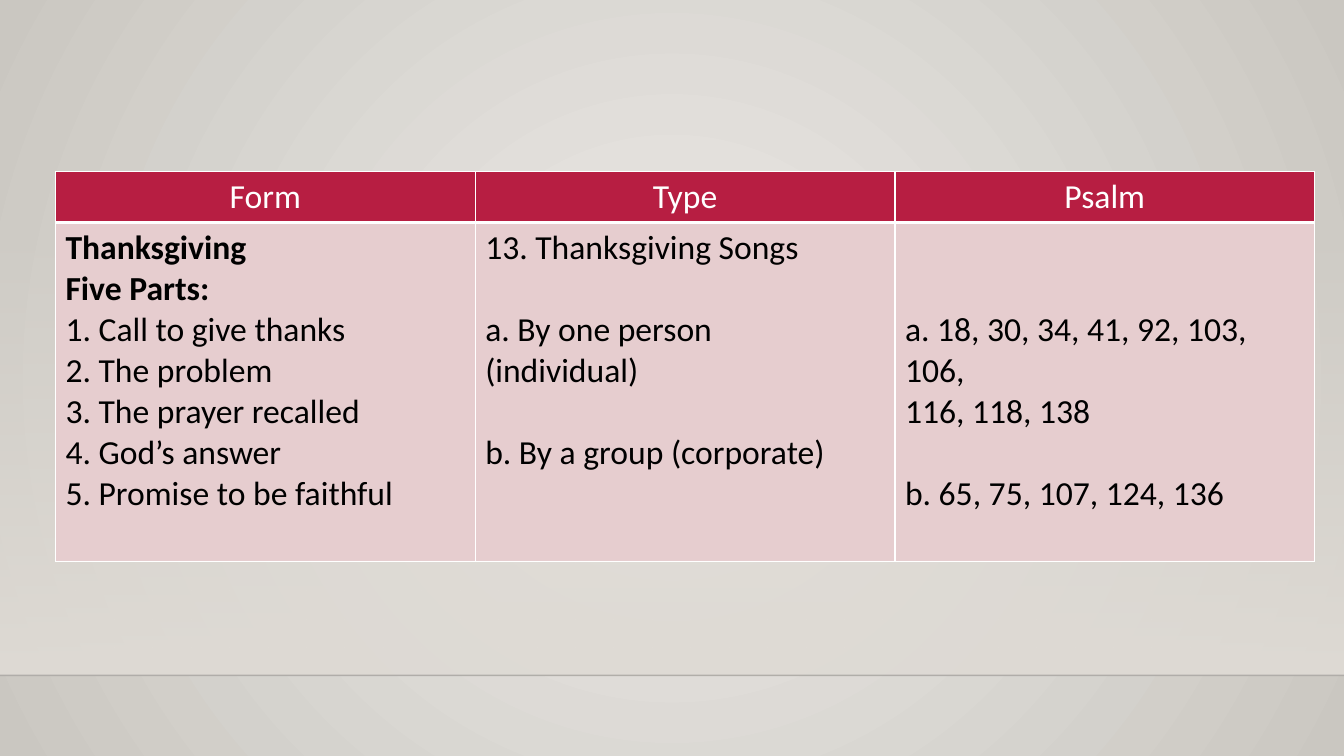
from dataclasses import dataclass

from lxml import etree
from pptx import Presentation
from pptx.dml.color import RGBColor
from pptx.enum.shapes import MSO_CONNECTOR, MSO_SHAPE
from pptx.enum.text import PP_ALIGN
from pptx.oxml import parse_xml
from pptx.oxml.ns import nsdecls, qn
from pptx.util import Inches, Pt

CENTER = PP_ALIGN.CENTER
STRAIGHT = MSO_CONNECTOR.STRAIGHT
RECTANGLE = MSO_SHAPE.RECTANGLE

# Content: each entry is (text, bold, lines left free above it)
HEADERS = ["Form", "Type", "Psalm"]
BODY = [
    [
        ("Thanksgiving", True, 0),
        ("Five Parts:", True, 0),
        ("1. Call to give thanks", False, 0),
        ("2. The problem", False, 0),
        ("3. The prayer recalled", False, 0),
        ("4. God’s answer", False, 0),
        ("5. Promise to be faithful", False, 0),
    ],
    [
        ("13. Thanksgiving Songs", False, 0),
        ("a. By one person", False, 1),
        ("(individual)", False, 0),
        ("b. By a group (corporate)", False, 1),
    ],
    [
        ("a. 18, 30, 34, 41, 92, 103, 106,", False, 2),
        ("116, 118, 138", False, 0),
        ("b. 65, 75, 107, 124, 136", False, 1),
    ],
]


@dataclass(frozen=True)
class Theme:
    font: str = "Calibri"
    size: int = 24
    line_height: float = 29.3
    header: str = "B71E42"
    body: str = "E6CDCF"
    white: str = "FFFFFF"
    black: str = "000000"
    glow_center: str = "ECEAE7"
    glow_edge: str = "CAC7C1"
    floor: str = "DFDBD5"
    horizon: str = "000001"


THEME = Theme()
WIDTH, HEIGHT = 13.33, 7.5
BAND_TOP, HORIZON = 2.21, 6.7
TABLE_LEFT, TABLE_TOP, TABLE_WIDTH = 0.55, 1.7, 12.49
ROW_HEIGHTS = [0.5, 3.36]
CELL_MARGIN = 0.05
RADIAL = '<a:path path="circle"><a:fillToRect l="50000" t="50000" r="50000" b="50000"/></a:path>'
DOWNWARD = '<a:lin ang="5400000" scaled="0"/>'


def set_gradient(element, stops, direction):
    """Replace the gradient in element; stops are (color, opacity percent)."""
    first, last = (
        f'<a:srgbClr val="{color}"><a:alpha val="{opacity * 1000}"/></a:srgbClr>'
        for color, opacity in stops
    )
    gradient = parse_xml(
        f'<a:gradFill {nsdecls("a")} rotWithShape="1"><a:gsLst>'
        f'<a:gs pos="0">{first}</a:gs><a:gs pos="100000">{last}</a:gs>'
        f'</a:gsLst>{direction}</a:gradFill>'
    )
    previous = element.find(".//" + qn("a:gradFill"))
    previous.getparent().replace(previous, gradient)


def set_borders(cell, bottom_width):
    properties = cell._tc.get_or_add_tcPr()
    widths = {"lnL": 1, "lnR": 1, "lnT": 1, "lnB": bottom_width}
    for position, (side, width) in enumerate(widths.items()):
        border = parse_xml(
            f'<a:{side} {nsdecls("a")} w="{Pt(width)}"><a:solidFill>'
            f'<a:srgbClr val="{THEME.white}"/></a:solidFill></a:{side}>'
        )
        properties.insert(position, border)


def fill_cell(cell, entries, fill, color, alignment=None, bottom_width=1):
    cell.fill.solid()
    cell.fill.fore_color.rgb = RGBColor.from_string(fill)
    set_borders(cell, bottom_width)
    # Free lines above the first entry become the cell's top margin
    cell.margin_top = Inches(CELL_MARGIN) + Pt(entries[0][2] * THEME.line_height)
    cell.text_frame.text = "\n".join(text for text, _, _ in entries)
    for index, (_, bold, free_lines) in enumerate(entries):
        paragraph = cell.text_frame.paragraphs[index]
        paragraph.alignment = alignment
        if index and free_lines:
            paragraph.space_before = Pt(free_lines * THEME.line_height)
        font = paragraph.runs[0].font
        font.name, font.size, font.bold = THEME.font, Pt(THEME.size), bold
        font.color.rgb = RGBColor.from_string(color)


def add_backdrop(slide):
    # Radial background
    slide.background.fill.gradient()
    set_gradient(slide.element, [(THEME.glow_center, 100), (THEME.glow_edge, 100)], RADIAL)

    # Band fading in towards the horizon
    band = slide.shapes.add_shape(
        RECTANGLE, 0, Inches(BAND_TOP), Inches(WIDTH), Inches(HORIZON - BAND_TOP)
    )
    band.shadow.inherit = False
    band.line.fill.background()
    band.fill.gradient()
    set_gradient(band.element, [(THEME.floor, 0), (THEME.floor, 100)], DOWNWARD)

    # Horizon line
    line = slide.shapes.add_connector(
        STRAIGHT, 0, Inches(HORIZON), Inches(WIDTH), Inches(HORIZON)
    )
    line.line.width = Pt(1)
    line.line.color.rgb = RGBColor.from_string(THEME.horizon)
    color = line.element.find(".//" + qn("a:srgbClr"))
    etree.SubElement(color, qn("a:alpha")).set("val", "20000")
    etree.SubElement(line.element.spPr, qn("a:effectLst"))


def add_psalm_table(slide):
    table = slide.shapes.add_table(
        len(ROW_HEIGHTS), len(HEADERS), Inches(TABLE_LEFT), Inches(TABLE_TOP),
        Inches(TABLE_WIDTH), Inches(sum(ROW_HEIGHTS))
    ).table
    for row, height in zip(table.rows, ROW_HEIGHTS):
        row.height = Inches(height)
    for column, (header, entries) in enumerate(zip(HEADERS, BODY)):
        fill_cell(table.cell(0, column), [(header, False, 0)],
                  THEME.header, THEME.white, CENTER, bottom_width=3)
        fill_cell(table.cell(1, column), entries, THEME.body, THEME.black)
        # The header's thick rule is shared with the body row
        top = table.cell(1, column)._tc.tcPr.find(qn("a:lnT"))
        top.set("w", str(Pt(3)))


def main():
    presentation = Presentation()
    presentation.slide_width, presentation.slide_height = Inches(WIDTH), Inches(HEIGHT)
    slide = presentation.slides.add_slide(presentation.slide_layouts[6])
    add_backdrop(slide)
    add_psalm_table(slide)
    presentation.save("out.pptx")


if __name__ == "__main__":
    main()
